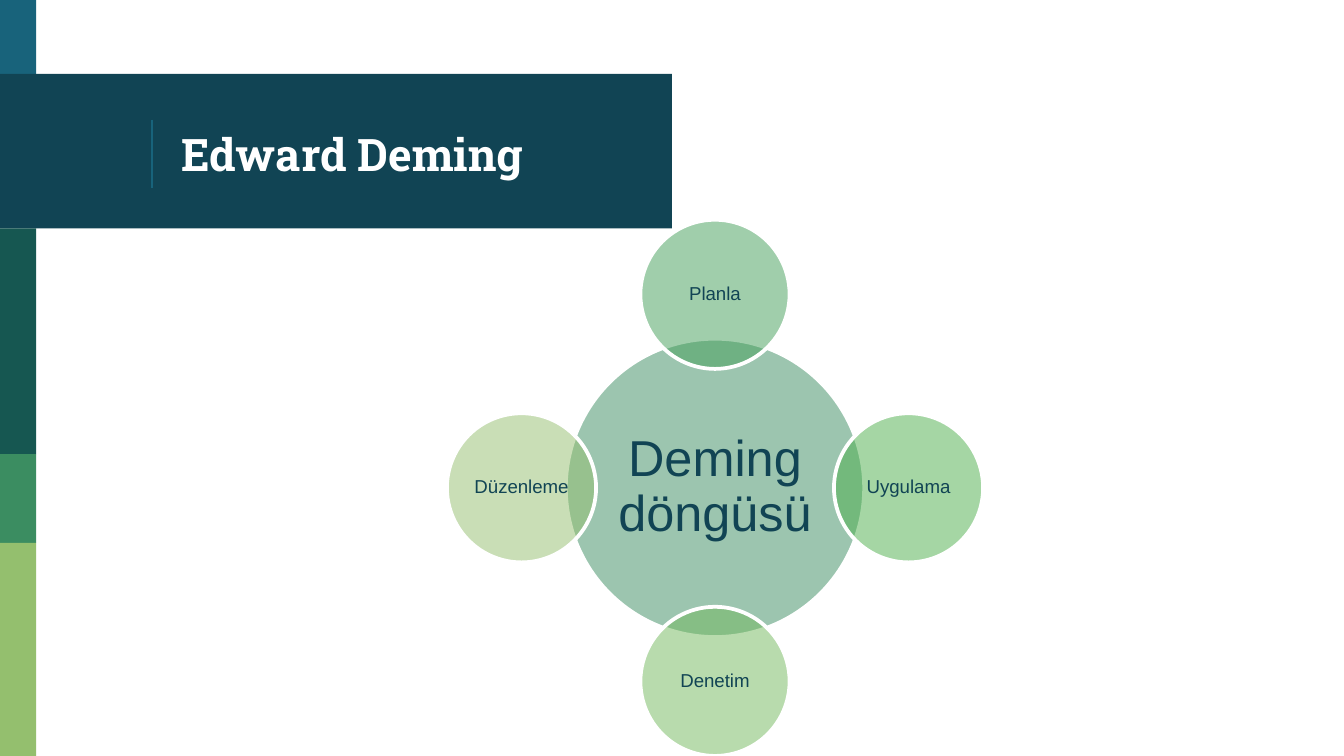
"""Build the Edward Deming slide with the Deming cycle diagram."""
import lxml.etree
import pptx
import pptx.dml.color
import pptx.enum.shapes
import pptx.enum.text
import pptx.oxml.ns
import pptx.util

RGBColor = pptx.dml.color.RGBColor
WHITE = RGBColor(0xFF, 0xFF, 0xFF)
NAVY = RGBColor(0x11, 0x44, 0x54)
BLUE = RGBColor(0x18, 0x63, 0x7B)
TEAL = RGBColor(0x16, 0x57, 0x51)
GREEN = RGBColor(0x3B, 0x8D, 0x61)
LIME = RGBColor(0x94, 0xBF, 0x6E)
EMERALD = RGBColor(0x43, 0x9E, 0x58)
GRASS = RGBColor(0x4C, 0xAF, 0x4B)
LEAF = RGBColor(0x72, 0xB8, 0x5C)

SHAPE = pptx.enum.shapes.MSO_SHAPE
MIDDLE = pptx.enum.text.MSO_ANCHOR.MIDDLE
CENTER = pptx.enum.text.PP_ALIGN.CENTER
Inches = pptx.util.Inches
qn = pptx.oxml.ns.qn

presentation = pptx.Presentation()
presentation.slide_width = Inches(10)
presentation.slide_height = presentation.slide_width * 9 // 16
slide_height = presentation.slide_height.inches
slide = presentation.slides.add_slide(presentation.slide_layouts[6])


def add_filled(kind, left, top, width, height, color):
    shape = slide.shapes.add_shape(
        kind, Inches(left), Inches(top), Inches(width), Inches(height))
    shape.shadow.inherit = False
    shape.fill.solid()
    shape.fill.fore_color.rgb = color
    shape.line.fill.background()
    return shape


def write_text(shape, text, font_name, size, color, inset):
    frame = shape.text_frame
    frame.word_wrap = True
    frame.vertical_anchor = MIDDLE
    frame.margin_left = frame.margin_right = Inches(inset)
    frame.margin_top = frame.margin_bottom = Inches(inset)
    paragraph = frame.paragraphs[0]
    paragraph.text = text
    paragraph.font.name = font_name
    paragraph.font.size = pptx.util.Pt(size)
    paragraph.font.color.rgb = color
    return paragraph


strip_width = 0.27
strip_edges = [0, 0.55, 1.7, 3.38, 4.04, slide_height]
strip_colors = [BLUE, NAVY, TEAL, GREEN, LIME]
for top, bottom, color in zip(strip_edges, strip_edges[1:], strip_colors):
    width = 5 if color == NAVY else strip_width
    add_filled(SHAPE.RECTANGLE, 0, top, width, bottom - top, color)

divider = slide.shapes.add_connector(
    pptx.enum.shapes.MSO_CONNECTOR.STRAIGHT,
    Inches(1.13), Inches(0.89), Inches(1.13), Inches(1.4))
divider.line.color.rgb = BLUE
divider.line.width = pptx.util.Pt(0.75)
lxml.etree.SubElement(divider._element.spPr, qn("a:effectLst"))

title = slide.shapes.add_textbox(
    Inches(1.25), Inches(0.58), Inches(3.51), Inches(1.12))
title_paragraph = write_text(title, "Edward Deming", "Roboto Slab", 24, WHITE, 0.1)
title_paragraph.font.bold = True

center_x, center_y, orbit = 5.32, 3.63, 1.44
hub, satellite = 2.22, 1.11
circles = [
    ("Deming döngüsü", 0, 0, hub, GREEN, 27, 0.04),
    ("Planla", 0, -1, satellite, EMERALD, 10, 0.01),
    ("Uygulama", 1, 0, satellite, GRASS, 10, 0.01),
    ("Denetim", 0, 1, satellite, LEAF, 10, 0.01),
    ("Düzenleme", -1, 0, satellite, LIME, 10, 0.01),
]
for label, column, row, diameter, color, size, inset in circles:
    circle = add_filled(
        SHAPE.OVAL,
        center_x + column * orbit - diameter / 2,
        center_y + row * orbit - diameter / 2,
        diameter, diameter, color)
    fill_color = circle._element.spPr.find(qn("a:solidFill")).find(qn("a:srgbClr"))
    lxml.etree.SubElement(fill_color, qn("a:alpha"), val="50000")
    circle.line.color.rgb = WHITE
    circle.line.width = pptx.util.Pt(2)
    paragraph = write_text(circle, label, "Arial", size, NAVY, inset)
    paragraph.alignment = CENTER
    paragraph.line_spacing = 0.9

presentation.save("out.pptx")
